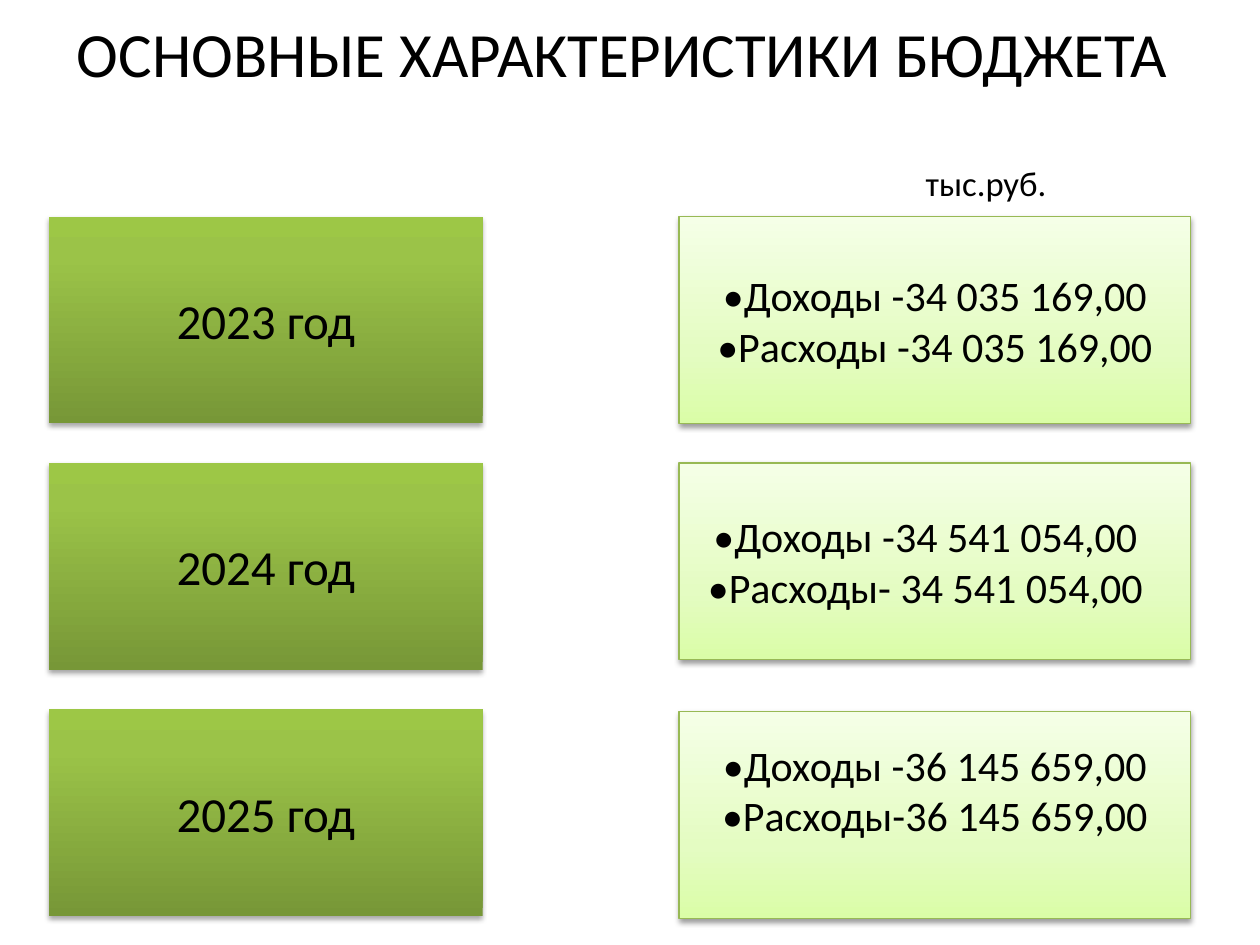
"""Build the slide of budget totals by year."""
from dataclasses import dataclass

from lxml import etree
from pptx import Presentation, util as u
from pptx.dml.color import RGBColor
from pptx.enum import shapes, text
from pptx.oxml.ns import qn

WIDTH, HEIGHT = 10, 7.5
FONT = "Calibri"
COLOURS = {"ink": "000000", "edge": "98B955"}
YEAR_STOPS = ((0, "779737"), (80, "9BC348"), (100, "9DC746"))
TOTALS_STOPS = ((0, "DAFDA7"), (35, "E4FCC2"), (100, "F5FFE7"))
TOP, PITCH, CARD_HEIGHT = 1.72, 1.955, 1.64
YEAR_COLUMN, TOTALS_COLUMN = (0.39, 3.44), (5.39, 4.06)


@dataclass(frozen=True)
class Budget:
    year: str
    totals: tuple[str, str]
    height: float = CARD_HEIGHT
    nudge: float = 0
    lift: float = 0
    income_margin: float = 0


BUDGETS = (
    Budget("2023 год", ("•Доходы -34 035 169,00", "•Расходы -34 035 169,00")),
    Budget("2024 год", ("•Доходы -34 541 054,00", "•Расходы- 34 541 054,00"),
           height=1.56, income_margin=0.15),
    Budget("2025 год", ("•Доходы -36 145 659,00", "•Расходы-36 145 659,00"),
           nudge=0.02, lift=0.4),
)


def write(frame, lines: tuple[str, ...], size: float) -> None:
    frame.text = "\n".join(lines)
    frame.word_wrap = True
    frame.vertical_anchor = text.MSO_ANCHOR.MIDDLE
    for paragraph in frame.paragraphs:
        paragraph.alignment = text.PP_ALIGN.CENTER
        for run in paragraph.runs:
            run.font.size, run.font.name = u.Pt(size), FONT
            run.font.color.rgb = RGBColor.from_string(COLOURS["ink"])


def add_label(slide, box: tuple[float, ...], line: str, size: float) -> None:
    label = slide.shapes.add_textbox(*map(u.Inches, box))
    write(label.text_frame, (line,), size)


def add_colour(parent, colour: str):
    return etree.SubElement(parent, qn("a:srgbClr"), val=colour)


def add_card(slide, box: tuple[float, ...], stops, shadow: tuple[float, int],
             lines: tuple[str, ...], size: float):
    card = slide.shapes.add_shape(shapes.MSO_SHAPE.RECTANGLE, *map(u.Inches, box))
    card.fill.gradient()
    card.fill.gradient_angle = 90
    properties = card._element.spPr
    ramp = properties.find(".//" + qn("a:gsLst"))
    for stop in list(ramp):
        ramp.remove(stop)
    for share, colour in stops:
        add_colour(etree.SubElement(ramp, qn("a:gs"), pos=str(share * 1000)), colour)
    card.line.fill.background()
    card.shadow.inherit = False
    distance, opacity = shadow
    outer = etree.SubElement(
        properties.find(qn("a:effectLst")), qn("a:outerShdw"),
        blurRad=str(u.Pt(3.1)), dist=str(u.Pt(distance)), dir="5400000", rotWithShape="0")
    etree.SubElement(add_colour(outer, COLOURS["ink"]), qn("a:alpha"), val=str(opacity * 1000))
    write(card.text_frame, lines, size)
    return card


def add_budget(slide, row: int, budget: Budget) -> None:
    top = TOP + row * PITCH
    left, width = YEAR_COLUMN
    add_card(slide, (left, top, width, CARD_HEIGHT), YEAR_STOPS, (1.8, 35), (budget.year,), 28)
    left, width = TOTALS_COLUMN
    totals = add_card(slide, (left, top + budget.nudge, width, budget.height),
                      TOTALS_STOPS, (1.6, 38), budget.totals, 24)
    totals.line.color.rgb = RGBColor.from_string(COLOURS["edge"])
    totals.line.width = u.Pt(0.75)
    totals.text_frame.margin_bottom = u.Inches(0.05 + budget.lift)
    if budget.income_margin:
        income = totals.text_frame.paragraphs[0]._p.get_or_add_pPr()
        income.set("marR", str(u.Inches(budget.income_margin)))


def main() -> None:
    deck = Presentation()
    deck.slide_width, deck.slide_height = u.Inches(WIDTH), u.Inches(HEIGHT)
    slide = deck.slides.add_slide(deck.slide_layouts[6])
    add_label(slide, (0, 0, 0.988 * WIDTH, 0.11 * HEIGHT), "ОСНОВНЫЕ ХАРАКТЕРИСТИКИ БЮДЖЕТА", 36)
    add_label(slide, (0.7 * WIDTH, 1.25, 0.165 * WIDTH, 0.4), "тыс.руб.", 19.8)
    for row, budget in enumerate(BUDGETS):
        add_budget(slide, row, budget)
    deck.save("out.pptx")


if __name__ == "__main__":
    main()
